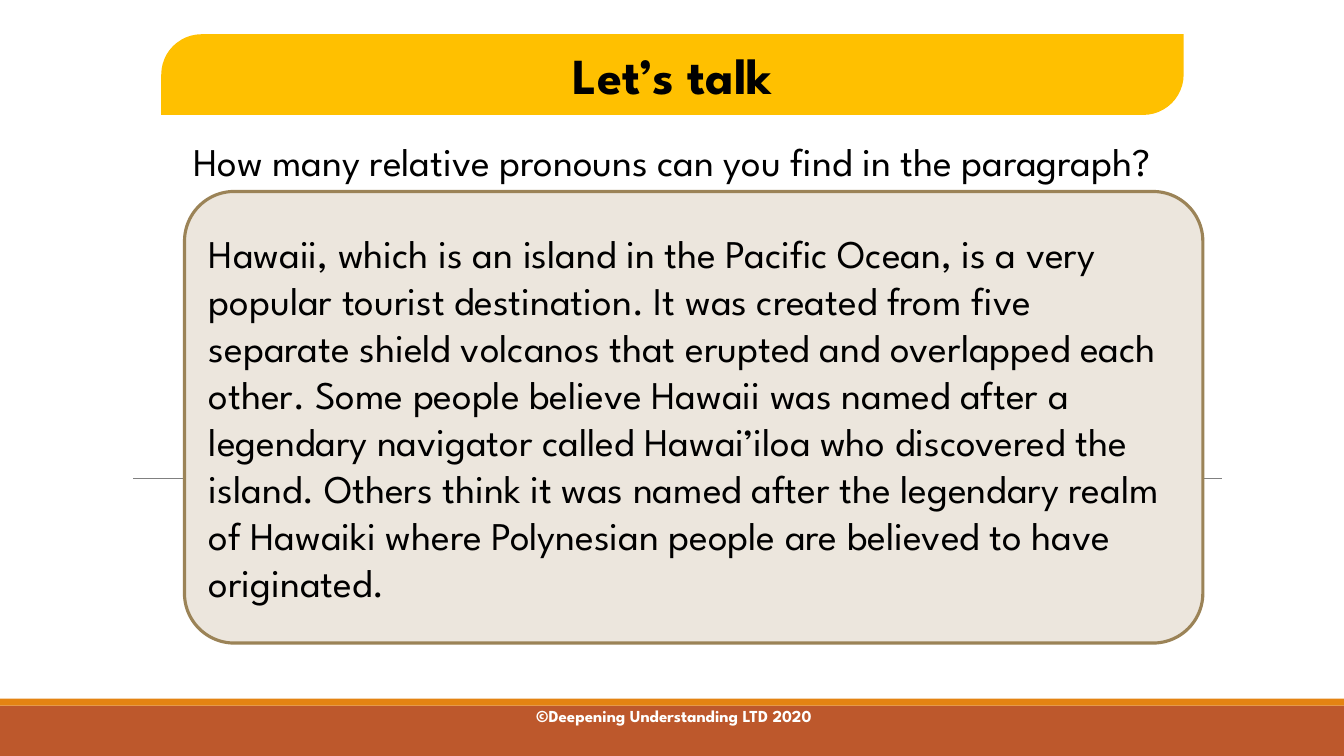
from lxml.etree import SubElement
from pptx import Presentation
from pptx.dml.color import RGBColor
from pptx.enum.shapes import MSO_CONNECTOR, MSO_SHAPE
from pptx.enum.text import MSO_ANCHOR, PP_ALIGN
from pptx.oxml.ns import qn
from pptx.util import Inches, Pt

BLACK = RGBColor(0x00, 0x00, 0x00)
WHITE = RGBColor(0xFF, 0xFF, 0xFF)
GREY = RGBColor(0x80, 0x80, 0x80)
RUST = RGBColor(0xBD, 0x58, 0x2C)
ORANGE = RGBColor(0xE4, 0x83, 0x12)
YELLOW = RGBColor(0xFF, 0xC0, 0x00)
SAND = RGBColor(0xEC, 0xE6, 0xDD)
BROWN = RGBColor(0x9B, 0x83, 0x57)

presentation = Presentation()
presentation.slide_width = Inches(13.33)
presentation.slide_height = Inches(7.5)
slide = presentation.slides.add_slide(presentation.slide_layouts[6])


def place(left, top, width, height):
    """Turn percentages of the slide's size into lengths."""
    across, down = presentation.slide_width / 100, presentation.slide_height / 100
    return int(left * across), int(top * down), int(width * across), int(height * down)


def write(shape, text, size=28, color=BLACK, bold=False,
          align=PP_ALIGN.CENTER, anchor=MSO_ANCHOR.TOP):
    frame = shape.text_frame
    frame.word_wrap = True
    frame.vertical_anchor = anchor
    paragraph = frame.paragraphs[0]
    paragraph.text = text
    paragraph.alignment = align
    font = paragraph.font
    font.name, font.size, font.bold = "League Spartan", Pt(size), bold
    font.color.rgb = color


# Horizontal rule behind the reading panel
start_x, rule_y, rule_width, _ = place(9.9, 63.33, 81.02, 0)
rule = slide.shapes.add_connector(
    MSO_CONNECTOR.STRAIGHT, start_x, rule_y, start_x + rule_width, rule_y)
rule.line.color.rgb = GREY
rule.line.width = Pt(0.5)
SubElement(rule._element.spPr, qn("a:effectLst"))

# Footer bands, title banner and reading panel
blocks = {}
for name, preset, fill, outline, adjustments, box in [
    ("band", MSO_SHAPE.RECTANGLE, RUST, None, [], (0, 93.33, 100, 6.67)),
    ("stripe", MSO_SHAPE.RECTANGLE, ORANGE, None, [], (0, 92.4, 100, 0.93)),
    ("banner", MSO_SHAPE.ROUND_2_DIAG_RECTANGLE, YELLOW, None, [0.5, 0],
     (12, 4.53, 76.07, 10.67)),
    ("panel", MSO_SHAPE.ROUNDED_RECTANGLE, SAND, BROWN, [0.11],
     (13.73, 25.33, 75.77, 59.73)),
]:
    shape = slide.shapes.add_shape(preset, *place(*box))
    shape.shadow.inherit = False
    shape.fill.solid()
    shape.fill.fore_color.rgb = fill
    if outline is None:
        shape.line.fill.background()
    else:
        shape.line.color.rgb = outline
        shape.line.width = Pt(2.25)
    for index, value in enumerate(adjustments):
        shape.adjustments[index] = value
    blocks[name] = shape

write(blocks["banner"], "Let’s talk", size=36, bold=True, anchor=MSO_ANCHOR.MIDDLE)
write(
    blocks["panel"],
    "Hawaii, which is an island in the Pacific Ocean, is a very popular tourist "
    "destination. It was created from five separate shield volcanos that erupted "
    "and overlapped each other. Some people believe Hawaii was named after a "
    "legendary navigator called Hawai’iloa who discovered the island. Others think "
    "it was named after the legendary realm of Hawaiki where Polynesian people are "
    "believed to have originated.",
    align=PP_ALIGN.LEFT, anchor=MSO_ANCHOR.MIDDLE)

# Question and copyright line
question = slide.shapes.add_textbox(*place(0, 17.47, 100, 20.13))
write(question, "How many relative pronouns can you find in the paragraph?")
copyright_line = slide.shapes.add_textbox(*place(31.21, 92.67, 37.88, 4))
write(copyright_line, "©Deepening Understanding LTD 2020", size=12, color=WHITE, bold=True)

presentation.save("out.pptx")
